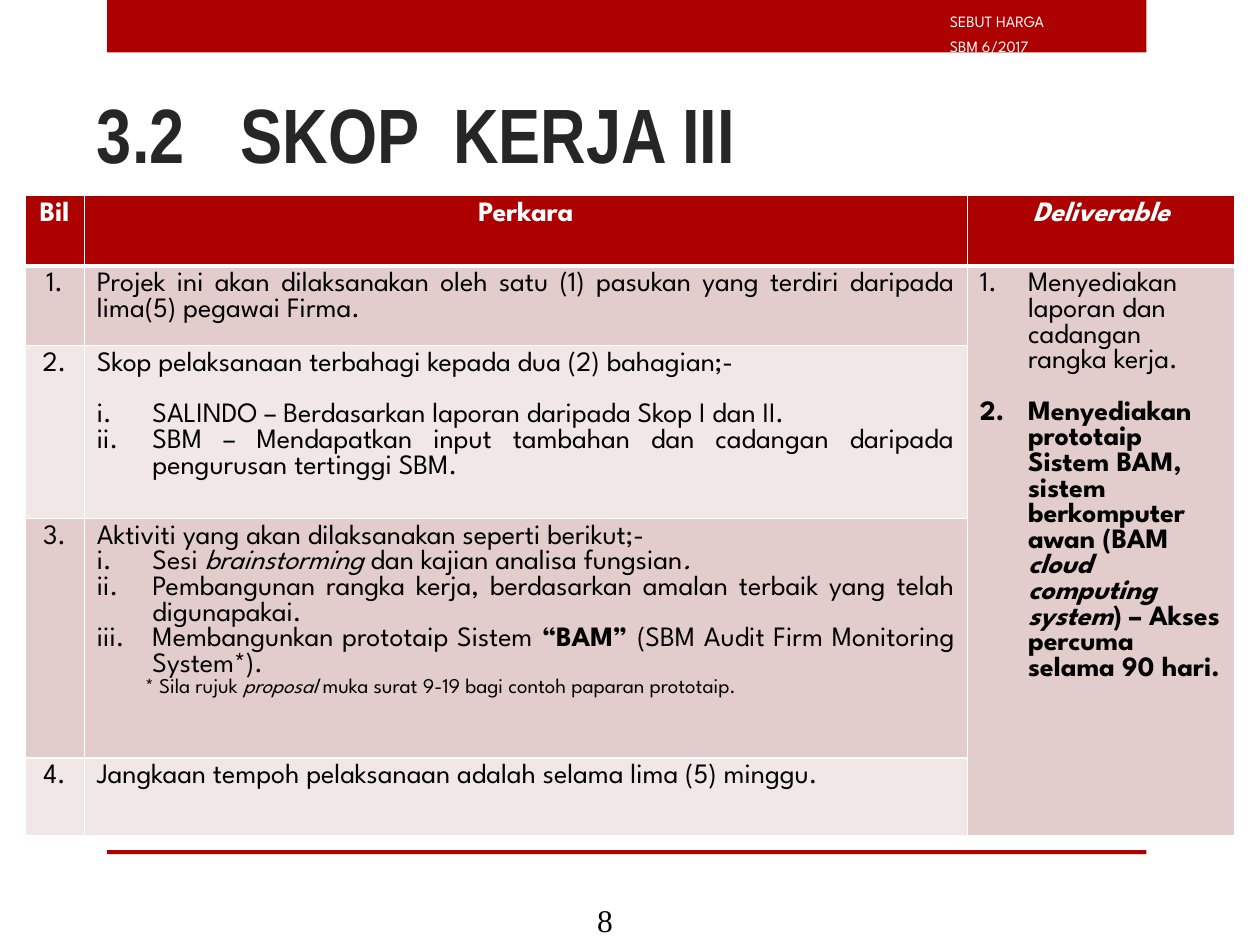
import pptx
import pptx.dml.color
import pptx.enum.shapes
import pptx.enum.text
import pptx.oxml
import pptx.oxml.ns
import pptx.util
from lxml import etree

Cm, Pt = pptx.util.Cm, pptx.util.Pt
ALIGN = pptx.enum.text.PP_ALIGN
ANCHOR = pptx.enum.text.MSO_ANCHOR
RED, WHITE, BLACK, INK = "AD0101", "FFFFFF", "000000", "262626"
BANDS = ("E3CCCC", "F1E7E7")
ROMAN, ARABIC = "romanLcPeriod", "arabicPeriod"


def color(value):
    return pptx.dml.color.RGBColor.from_string(value)


def item(*spans, **options):
    """Describe one paragraph: spans are strings or (text, "b"/"i") pairs."""
    return spans, options


class Page:
    font = "League Spartan"
    size = 16

    def __init__(self, deck):
        self.slide = deck.slides.add_slide(deck.slide_layouts[5])

    def bar(self, left, top, width, height):
        shape = self.slide.shapes.add_shape(
            pptx.enum.shapes.MSO_SHAPE.RECTANGLE,
            Cm(left), Cm(top), Cm(width), Cm(height))
        shape.shadow.inherit = False
        shape.fill.solid()
        shape.fill.fore_color.rgb = color(RED)
        shape.line.fill.background()

    def title(self, text, left, top, width, height):
        box = self.slide.shapes.title
        box.left, box.top, box.width, box.height = map(Cm, (left, top, width, height))
        frame = box.text_frame
        frame.auto_size = pptx.enum.text.MSO_AUTO_SIZE.NONE
        frame.vertical_anchor = ANCHOR.BOTTOM
        self.fill_frame(frame, [item(text, size=44, font="Arial Narrow", ink=INK, bold=True)])

    def text(self, items, left, top, width, height):
        box = self.slide.shapes.add_textbox(Cm(left), Cm(top), Cm(width), Cm(height))
        box.text_frame.word_wrap = True
        self.fill_frame(box.text_frame, items)

    def fill_frame(self, frame, items, align=ALIGN.LEFT):
        for index, (spans, options) in enumerate(items):
            para = frame.paragraphs[0] if index == 0 else frame.add_paragraph()
            self.paragraph(para, spans, align, **options)

    def paragraph(self, para, spans, align, size=None, font=None, ink=BLACK,
                  bold=False, italic=False, numbering=None, indent=0, hang=0,
                  before=0, spacing=1.0):
        para.alignment = align
        para.space_before = Pt(before)
        para.line_spacing = spacing
        properties = para._p.get_or_add_pPr()
        if indent:
            properties.set("marL", str(Cm(indent)))
            properties.set("indent", str(-Cm(hang)))
        if numbering:
            bullet = etree.SubElement(properties, pptx.oxml.ns.qn("a:buAutoNum"))
            bullet.set("type", numbering)
        style = para.font
        style.size, style.name = Pt(size or self.size), font or self.font
        style.bold, style.italic = bold, italic
        style.color.rgb = color(ink)
        for span in spans:
            words, mark = span if isinstance(span, tuple) else (span, "")
            run = para.add_run()
            run.text = words
            if "b" in mark:
                run.font.bold = True
            if "i" in mark:
                run.font.italic = True

    def table(self, rows, widths, heights, left, top):
        """Fill a grid whose last column is merged below the header."""
        grid = self.slide.shapes.add_table(
            len(heights), len(widths), Cm(left), Cm(top),
            Cm(sum(widths)), Cm(sum(heights))).table
        grid.first_row = grid.horz_banding = False
        for column, width in zip(grid.columns, widths):
            column.width = Cm(width)
        for row, height in zip(grid.rows, heights):
            row.height = Cm(height)
        last = len(widths) - 1
        grid.cell(1, last).merge(grid.cell(len(heights) - 1, last))
        for r, cells in enumerate(rows):
            for c in range(len(widths)):
                cell = grid.cell(r, c)
                self.borders(cell, top=3 if r == 1 else 1, bottom=3 if r == 0 else 1)
                cell.fill.solid()
                band = BANDS[0] if c == last else BANDS[(r - 1) % 2]
                cell.fill.fore_color.rgb = color(RED if r == 0 else band)
                if c < len(cells):
                    align = (ALIGN.CENTER if r == 0 or c == 0
                             else ALIGN.LEFT if c == last else ALIGN.JUSTIFY)
                    self.fill_frame(cell.text_frame, cells[c], align)

    def borders(self, cell, top, bottom):
        properties = cell._tc.get_or_add_tcPr()
        for side, width in (("L", 1), ("R", 1), ("T", top), ("B", bottom)):
            line = etree.SubElement(properties, pptx.oxml.ns.qn(f"a:ln{side}"))
            line.set("w", str(Pt(width)))
            fill = etree.SubElement(line, pptx.oxml.ns.qn("a:solidFill"))
            etree.SubElement(fill, pptx.oxml.ns.qn("a:srgbClr")).set("val", WHITE)


def roman(*spans, **options):
    return item(*spans, numbering=ROMAN, indent=1.12, hang=1.12, **options)


def deliverable(*spans, **options):
    return item(*spans, numbering=ARABIC, indent=0.97, hang=0.97, **options)


def header(text, **options):
    return [item(text, ink=WHITE, bold=True, **options)]


GAP = 14.7  # height of one line of table text, in points
SCOPE = [
    [item("Projek ini akan dilaksanakan oleh satu (1) pasukan yang terdiri "
          "daripada lima(5) pegawai Firma.")],
    [item("Skop pelaksanaan terbahagi kepada dua (2) bahagian;-"),
     roman("SALINDO – Berdasarkan laporan daripada Skop I dan II.", before=GAP),
     roman("SBM – Mendapatkan input tambahan dan cadangan daripada "
           "pengurusan tertinggi SBM.")],
    [item("Aktiviti yang akan dilaksanakan seperti berikut;-"),
     roman("Sesi ", ("brainstorming ", "i"), "dan kajian analisa fungsian", (".", "i")),
     roman("Pembangunan rangka kerja, berdasarkan amalan terbaik yang telah digunapakai."),
     roman("Membangunkan prototaip Sistem ", ("“BAM” ", "b"),
           "(SBM Audit Firm Monitoring System*)."),
     item("* Sila rujuk ", ("proposal ", "i"),
          "muka surat 9-19 bagi contoh paparan prototaip.", size=12, indent=0.97)],
    [item("Jangkaan tempoh pelaksanaan adalah selama lima (5) minggu.")],
]
DELIVERABLES = [
    deliverable("Menyediakan laporan dan cadangan rangka kerja."),
    deliverable("Menyediakan prototaip Sistem BAM, sistem berkomputer awan (BAM ",
                ("cloud computing system", "i"),
                ") – Akses percuma selama 90 hari.", bold=True, before=GAP),
]


def main():
    deck = pptx.Presentation()
    deck.slide_width, deck.slide_height = Cm(25.4), Cm(19.05)
    page = Page(deck)
    page.bar(2.16, 0, 20.95, 1.06)
    page.bar(2.16, 17.14, 20.95, 0.08)
    page.text([item(line, size=9, ink=WHITE, spacing=1.3)
               for line in ("SEBUT HARGA", "SBM 6/2017")], 18.9, 0, 5.13, 1.02)
    page.text([item("8", size=18, font="Times New Roman")], 11.79, 18.03, 2.11, 1.02)
    page.title("3.2\t SKOP  KERJA III", 1.7, 1.68, 21.79, 2.06)

    rows = [[header("Bil"), header("Perkara"), header("Deliverable", italic=True)]]
    rows += [[[item(f"{number}.")], scope] for number, scope in enumerate(SCOPE, 1)]
    rows[1].append(DELIVERABLES)
    page.table(rows, widths=(1.2, 17.8, 5.4), heights=(1.42, 1.57, 3.36, 3.74, 1.57),
               left=0.5, top=3.94)
    deck.save("out.pptx")


if __name__ == "__main__":
    main()
